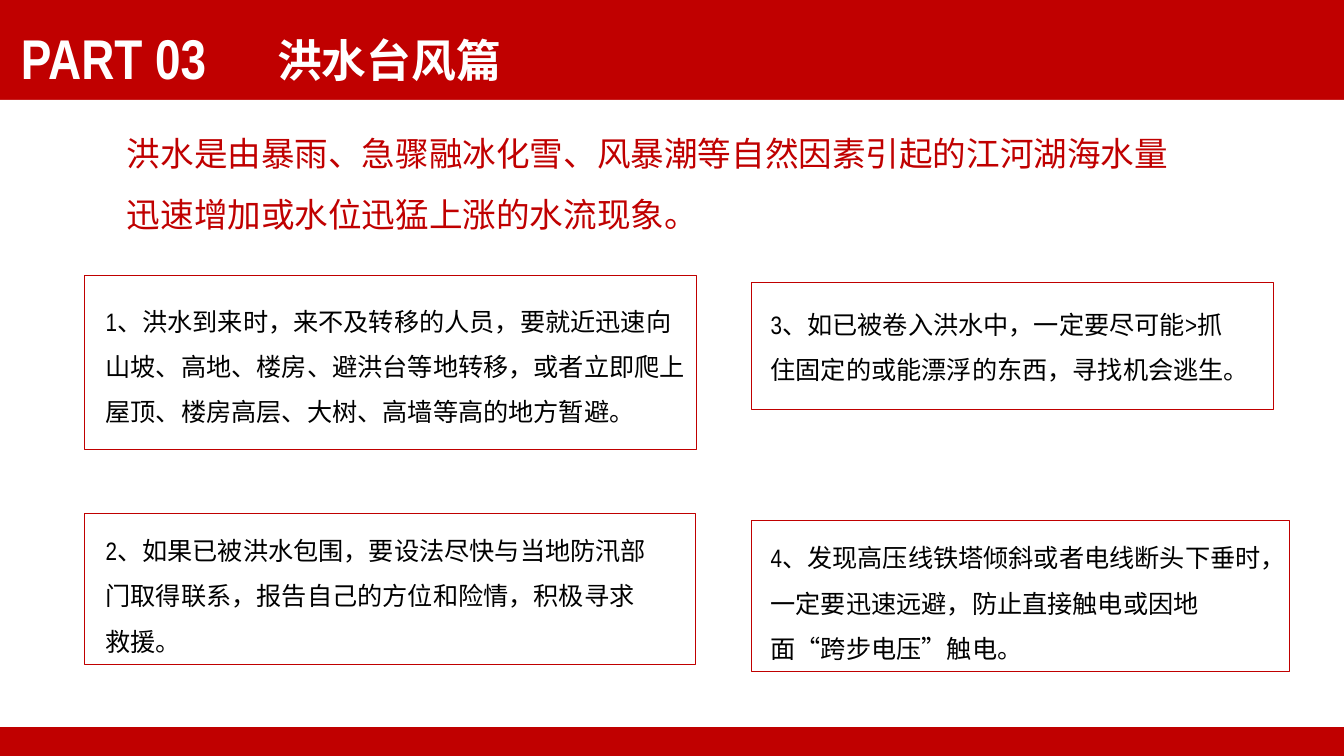
from lxml import etree
from pptx import Presentation, util as u
from pptx.dml.color import RGBColor
from pptx.enum import shapes as s, text as t
from pptx.oxml.ns import qn

RED, WHITE, BLACK = "C00000", "FFFFFF", "000000"
SANS, HEADING, NARROW = "Noto Sans CJK SC", "Noto Sans CJK JP", "Arial Narrow"

INTRO = "洪水是由暴雨、急骤融冰化雪、风暴潮等自然因素引起的江河湖海水量迅速增加或水位迅猛上涨的水流现象。"

# Each tip: text, frame box, text box (left, top, width, height in inches)
TIPS = [
    ("1、洪水到来时，来不及转移的人员，要就近迅速向山坡、高地、楼房、避洪台等地转移，或者立即爬上屋顶、楼房高层、大树、高墙等高的地方暂避。",
     (0.84, 2.73, 6.07, 1.73), (0.95, 2.78, 5.96, 1.56)),
    ("2、如果已被洪水包围，要设法尽快与当地防汛部门取得联系，报告自己的方位和险情，积极寻求救援。",
     (0.84, 5.09, 6.06, 1.5), (0.95, 5.34, 5.63, 0.99)),
    ("3、如已被卷入洪水中，一定要尽可能>抓住固定的或能漂浮的东西，寻找机会逃生。",
     (7.46, 2.8, 5.18, 1.26), (7.55, 3.07, 4.82, 0.6)),
    ("4、发现高压线铁塔倾斜或者电线断头下垂时，一定要迅速远避，防止直接触电或因地面“跨步电压”触电。",
     (7.46, 5.16, 5.34, 1.5), (7.55, 5.26, 5.15, 1.3)),
]


def color(hex_value):
    return RGBColor.from_string(hex_value)


def inches(box):
    return [u.Inches(value) for value in box]


def place(shape, box):
    shape.left, shape.top, shape.width, shape.height = inches(box)


def write(shape, wording, size, font, ink, bold=False, spacing=1.0,
          anchor=t.MSO_ANCHOR.MIDDLE, grow=False):
    frame = shape.text_frame
    frame.text = wording
    frame.word_wrap = True
    frame.vertical_anchor = anchor
    frame.auto_size = (t.MSO_AUTO_SIZE.SHAPE_TO_FIT_TEXT if grow
                       else t.MSO_AUTO_SIZE.NONE)
    paragraph = frame.paragraphs[0]
    paragraph.alignment = t.PP_ALIGN.LEFT
    paragraph.line_spacing = spacing
    paragraph.space_before = u.Pt(0)
    paragraph.font.size = u.Pt(size)
    paragraph.font.name = font
    paragraph.font.bold = bold
    paragraph.font.color.rgb = color(ink)
    # East Asian typeface for the Chinese characters
    properties = paragraph.runs[0].font
    properties.name = font
    latin = paragraph.runs[0]._r.rPr.find(qn("a:latin"))
    east_asian = etree.Element(qn("a:ea"))
    east_asian.set("typeface", SANS if font == NARROW else font)
    latin.addnext(east_asian)
    return paragraph


def add_panel(slide, box):
    """White content area between the red bands, behind everything."""
    panel = slide.shapes.add_shape(s.MSO_SHAPE.RECTANGLE, *inches(box))
    panel.shadow.inherit = False
    panel.fill.solid()
    panel.fill.fore_color.rgb = color(WHITE)
    panel.line.fill.background()
    slide.shapes._spTree.insert(2, panel._element)


def add_header(slide, box):
    """Part number and section title in the top band."""
    left, top, _, height = box
    place(slide.shapes.title, (left + 2.65, top + 0.09, 6.56, height + 0.01))
    write(slide.shapes.title, "洪水台风篇", 32, HEADING, WHITE, bold=True)

    part = slide.shapes.add_shape(
        s.MSO_SHAPE.ROUNDED_RECTANGLE, *inches((left + 0.11, top + 0.16, 4.12, 0.81)))
    part.adjustments[0] = 0
    part.shadow.inherit = False
    part.fill.background()
    part.line.fill.background()
    write(part, "PART 03", 40, NARROW, WHITE, bold=True)


def add_intro(slide, box):
    """Definition paragraph in the body placeholder, without a bullet."""
    intro = slide.placeholders[1]
    place(intro, box)
    paragraph = write(intro, INTRO, 24, SANS, RED, spacing=1.5,
                      anchor=t.MSO_ANCHOR.TOP, grow=True)
    settings = paragraph._p.get_or_add_pPr()
    settings.set("marL", "0")
    settings.set("indent", "0")
    bullet_none = etree.Element(qn("a:buNone"))
    settings.find(qn("a:spcBef")).addnext(bullet_none)


def add_tip(slide, wording, frame_box, text_box):
    """One numbered tip: text grouped with its red frame."""
    tip = slide.shapes.add_group_shape()
    advice = tip.shapes.add_textbox(*inches(text_box))
    write(advice, wording, 18, NARROW, BLACK, spacing=1.5, grow=True)
    border = tip.shapes.add_shape(s.MSO_SHAPE.RECTANGLE, *inches(frame_box))
    border.shadow.inherit = False
    border.fill.background()
    border.line.color.rgb = color(RED)
    border.line.width = u.Pt(0.75)


def main():
    deck = Presentation()
    deck.slide_width, deck.slide_height = u.Inches(13.34), u.Inches(7.5)
    slide = deck.slides.add_slide(deck.slide_layouts[1])
    slide.background.fill.solid()
    slide.background.fill.fore_color.rgb = color(RED)

    add_panel(slide, (0, 0.99, 13.34, 6.22))
    add_header(slide, (0, 0, 13.34, 0.99))
    add_intro(slide, (1.16, 1.07, 10.77, 1.25))
    for wording, frame_box, text_box in TIPS:
        add_tip(slide, wording, frame_box, text_box)

    deck.save("out.pptx")


if __name__ == "__main__":
    main()
